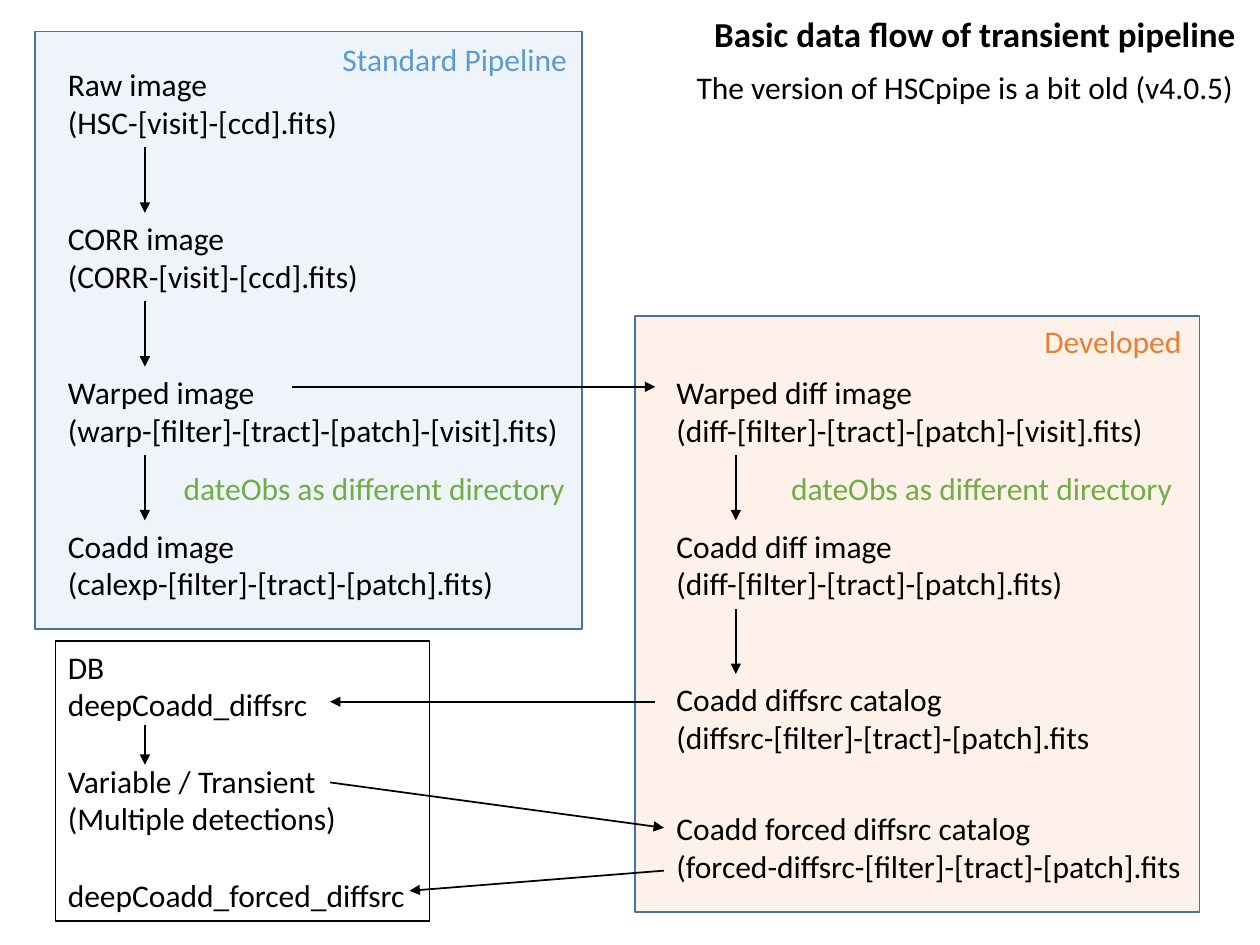
from dataclasses import dataclass

from lxml.etree import SubElement
from pptx import Presentation
from pptx.dml.color import RGBColor
from pptx.enum.shapes import MSO_CONNECTOR, MSO_SHAPE
from pptx.enum.text import MSO_AUTO_SIZE
from pptx.oxml.ns import qn
from pptx.util import Inches, Pt


@dataclass(frozen=True)
class Theme:
    font: str = "Calibri"
    body: int = 18
    title: int = 20
    line: float = 1
    blank_line: int = 22
    ink: str = "000000"
    standard: str = "5B9BD5"
    developed: str = "ED7D31"
    note: str = "70AD47"
    border: str = "43739E"
    panel_opacity: int = 10


THEME = Theme()


def rgb(color):
    return RGBColor.from_string(color)


def set_values(target, values):
    for name, value in values.items():
        setattr(target, name, value)


def add_text(shapes, box, lines, color=THEME.ink, size=THEME.body, bold=False, gaps=()):
    """Write unwrapped lines; gaps lists the lines that stand one line lower."""
    label = shapes.add_textbox(*map(Inches, box))
    frame = label.text_frame
    frame.text = "\n".join(lines)
    set_values(frame, {"word_wrap": False, "auto_size": MSO_AUTO_SIZE.SHAPE_TO_FIT_TEXT})
    for index, paragraph in enumerate(frame.paragraphs):
        if index in gaps:
            paragraph.space_before = Pt(THEME.blank_line)
        font = paragraph.runs[0].font
        set_values(font, {"name": THEME.font, "size": Pt(size), "bold": bold})
        font.color.rgb = rgb(color)
    return label


def add_panel(slide, box, heading, heading_box, color):
    """Tinted area grouped with its heading."""
    group = slide.shapes.add_group_shape()
    area = group.shapes.add_shape(MSO_SHAPE.RECTANGLE, *map(Inches, box))
    area.shadow.inherit = False
    area.fill.solid()
    area.fill.fore_color.rgb = rgb(color)
    tint = area.fill._xPr.find(qn("a:solidFill"))[0]
    SubElement(tint, qn("a:alpha"), val=str(THEME.panel_opacity * 1000))
    area.line.color.rgb = rgb(THEME.border)
    area.line.width = Pt(THEME.line)
    add_text(group.shapes, heading_box, [heading], color)


def add_arrow(slide, start, end):
    arrow = slide.shapes.add_connector(MSO_CONNECTOR.STRAIGHT, *map(Inches, start + end))
    arrow.line.color.rgb = rgb(THEME.ink)
    arrow.line.width = Pt(THEME.line)
    SubElement(arrow.line._get_or_add_ln(), qn("a:tailEnd"), type="triangle")
    SubElement(arrow._element.spPr, qn("a:effectLst"))


def add_steps(slide, left, steps):
    for top, width, name, file_pattern in steps:
        add_text(slide.shapes, (left, top, width, 0.71), [name, file_pattern])


def add_database(slide):
    database = add_text(
        slide.shapes, (0.44, 5.09, 2.97, 2.22),
        ["DB", "deepCoadd_diffsrc", "Variable / Transient",
         "(Multiple detections)", "deepCoadd_forced_diffsrc"],
        gaps=(2, 4))
    database.line.color.rgb = rgb(THEME.ink)
    database.line.width = Pt(THEME.line)


def main():
    deck = Presentation()
    set_values(deck, {"slide_width": Inches(10), "slide_height": Inches(7.5)})
    slide = deck.slides.add_slide(deck.slide_layouts[6])

    # Pipeline areas
    add_panel(slide, (0.28, 0.25, 4.34, 4.74), "Standard Pipeline",
              (2.62, 0.27, 2, 0.4), THEME.standard)
    add_panel(slide, (5.04, 2.51, 4.48, 4.73), "Developed",
              (8.19, 2.51, 1.35, 0.4), THEME.developed)

    # Data products, evenly stepped down each pipeline
    first_row, pitch = 0.47, 1.22
    raw, corr, warped, coadd, catalog = (first_row + pitch * row for row in range(5))
    add_steps(slide, 0.44, [
        (raw, 2.36, "Raw image", "(HSC-[visit]-[ccd].fits)"),
        (corr, 2.53, "CORR image", "(CORR-[visit]-[ccd].fits)"),
        (warped, 4.19, "Warped image", "(warp-[filter]-[tract]-[patch]-[visit].fits)"),
        (coadd, 3.61, "Coadd image", "(calexp-[filter]-[tract]-[patch].fits)"),
    ])
    add_steps(slide, 5.27, [
        (warped, 3.95, "Warped diff image", "(diff-[filter]-[tract]-[patch]-[visit].fits)"),
        (coadd, 3.31, "Coadd diff image", "(diff-[filter]-[tract]-[patch].fits)"),
        (catalog, 3.52, "Coadd diffsrc catalog", "(diffsrc-[filter]-[tract]-[patch].fits"),
        (6.37, 4.25, "Coadd forced diffsrc catalog",
         "(forced-diffsrc-[filter]-[tract]-[patch].fits"),
    ])
    add_database(slide)

    # Arrows down from one product to the next
    standard_x, developed_x = 1.15, 5.84
    for x, product in [(standard_x, raw), (standard_x, corr), (standard_x, warped),
                       (developed_x, warped), (developed_x, coadd)]:
        add_arrow(slide, (x, product + 0.7), (x, product + pitch))
    add_arrow(slide, (standard_x, 5.75), (standard_x, 6.07))

    # Arrows between the areas
    for start, end in [((2.32, 3.07), (5.2, 3.07)),
                       ((5.2, 5.57), (2.62, 5.57)),
                       ((2.62, 6.21), (5.27, 6.57)),
                       ((5.27, 6.91), (3.25, 7.07))]:
        add_arrow(slide, start, end)

    # Directory notes
    for left in (1.36, 6.18):
        add_text(slide.shapes, (left, 3.67, 3.27, 0.4),
                 ["dateObs as different directory"], THEME.note)

    # Title and version
    add_text(slide.shapes, (5.57, 0.05, 4.38, 0.44),
             ["Basic data flow of transient pipeline"], size=THEME.title, bold=True)
    add_text(slide.shapes, (5.43, 0.49, 4.57, 0.4),
             ["The version of HSCpipe is a bit old (v4.0.5)"])

    deck.save("out.pptx")


if __name__ == "__main__":
    main()
